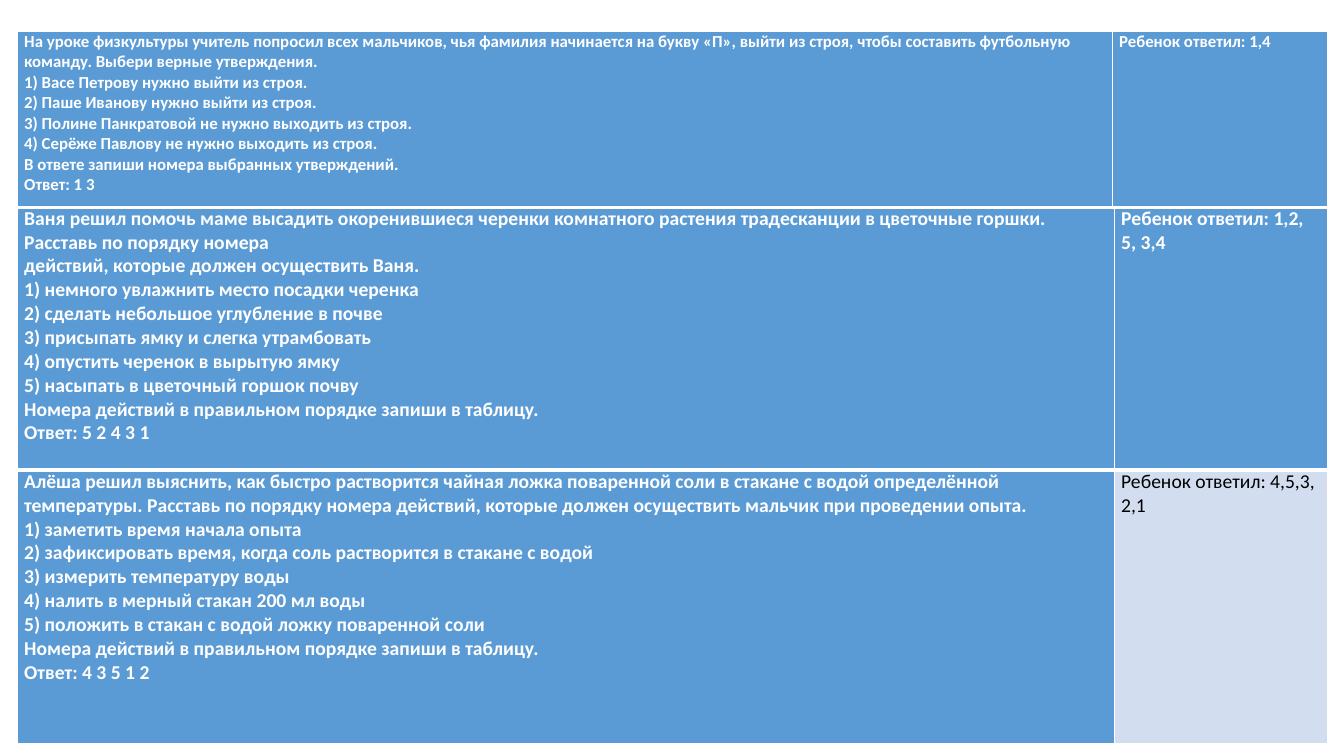
from dataclasses import dataclass

import pptx
import pptx.dml.color
import pptx.oxml
import pptx.oxml.ns
import pptx.util

EMU_PER_PX = 9144


@dataclass(frozen=True)
class Theme:
    font: str = "Calibri"
    blue: str = "5B9BD5"
    pale: str = "D2DEEF"
    white: str = "FFFFFF"
    black: str = "000000"
    small: int = 12
    large: int = 14
    thin_line: int = 1
    thick_line: int = 3


THEME = Theme()


@dataclass(frozen=True)
class CellStyle:
    fill: str
    color: str
    bold: bool


HEADER = CellStyle(THEME.blue, THEME.white, True)
BODY = CellStyle(THEME.pale, THEME.black, False)


@dataclass(frozen=True)
class Task:
    height: int
    lines: tuple[str, ...]
    child_answer: str
    answer_style: CellStyle
    top_line: int
    bottom_line: int


@dataclass(frozen=True)
class TaskTable:
    left: int
    top: int
    columns: tuple[int, int]
    size: int
    tasks: tuple[Task, ...]


PLANT_TASK = Task(
    261,
    (
        "Ваня решил помочь маме высадить окоренившиеся черенки комнатного растения "
        "традесканции в цветочные горшки. Расставь по порядку номера",
        "действий, которые должен осуществить Ваня.",
        "1) немного увлажнить место посадки черенка",
        "2) сделать небольшое углубление в почве",
        "3) присыпать ямку и слегка утрамбовать",
        "4) опустить черенок в вырытую ямку",
        "5) насыпать в цветочный горшок почву",
        "Номера действий в правильном порядке запиши в таблицу.",
        "Ответ: 5 2 4 3 1",
    ),
    "Ребенок ответил: 1,2, 5, 3,4",
    HEADER,
    THEME.thin_line,
    THEME.thick_line,
)

SALT_TASK = Task(
    272,
    (
        "Алёша решил выяснить, как быстро растворится чайная ложка поваренной соли "
        "в стакане с водой определённой",
        "температуры. Расставь по порядку номера действий, которые должен осуществить "
        "мальчик при проведении опыта.",
        "1) заметить время начала опыта",
        "2) зафиксировать время, когда соль растворится в стакане с водой",
        "3) измерить температуру воды",
        "4) налить в мерный стакан 200 мл воды",
        "5) положить в стакан с водой ложку поваренной соли",
        "Номера действий в правильном порядке запиши в таблицу.",
        "Ответ: 4 3 5 1 2",
    ),
    "Ребенок ответил: 4,5,3, 2,1",
    BODY,
    THEME.thick_line,
    THEME.thin_line,
)

FOOTBALL_TASK = Task(
    175,
    (
        "На уроке физкультуры учитель попросил всех мальчиков, чья фамилия начинается "
        "на букву «П», выйти из строя, чтобы составить футбольную команду. "
        "Выбери верные утверждения.",
        "1) Васе Петрову нужно выйти из строя.",
        "2) Паше Иванову нужно выйти из строя.",
        "3) Полине Панкратовой не нужно выходить из строя.",
        "4) Серёже Павлову не нужно выходить из строя.",
        "В ответе запиши номера выбранных утверждений.",
        "Ответ: 1 3",
    ),
    "Ребенок ответил: 1,4",
    HEADER,
    THEME.thin_line,
    THEME.thick_line,
)

TABLES = (
    TaskTable(17, 205, (1088, 212), THEME.large, (PLANT_TASK, SALT_TASK)),
    TaskTable(17, 31, (1086, 214), THEME.small, (FOOTBALL_TASK,)),
)


def px(length: int) -> pptx.util.Emu:
    return pptx.util.Emu(length * EMU_PER_PX)


def rgb(value: str) -> pptx.dml.color.RGBColor:
    return pptx.dml.color.RGBColor.from_string(value)


def set_borders(cell, top: int, bottom: int) -> None:
    properties = cell._tc.get_or_add_tcPr()
    widths = {"L": THEME.thin_line, "R": THEME.thin_line, "T": top, "B": bottom}
    for side, width in widths.items():
        properties.append(pptx.oxml.parse_xml(
            f'<a:ln{side} {pptx.oxml.ns.nsdecls("a")} w="{pptx.util.Pt(width)}">'
            f'<a:solidFill><a:srgbClr val="{THEME.white}"/></a:solidFill>'
            f'</a:ln{side}>'
        ))


def fill_cell(cell, lines: tuple[str, ...], style: CellStyle, size: int) -> None:
    cell.margin_left = cell.margin_right = px(7)
    cell.margin_top = cell.margin_bottom = px(0)
    cell.fill.solid()
    cell.fill.fore_color.rgb = rgb(style.fill)
    frame = cell.text_frame
    for index, line in enumerate(lines):
        paragraph = frame.add_paragraph() if index else frame.paragraphs[0]
        run = paragraph.add_run()
        run.text = line
        run.font.name = THEME.font
        run.font.size = pptx.util.Pt(size)
        run.font.bold = style.bold
        run.font.color.rgb = rgb(style.color)


def draw_table(slide, layout: TaskTable) -> None:
    height = sum(task.height for task in layout.tasks)
    table = slide.shapes.add_table(
        len(layout.tasks), len(layout.columns), px(layout.left), px(layout.top),
        px(sum(layout.columns)), px(height),
    ).table
    table.horz_banding = False
    for column, width in zip(table.columns, layout.columns):
        column.width = px(width)
    for row, task in zip(table.rows, layout.tasks):
        row.height = px(task.height)
        contents = ((task.lines, HEADER), ((task.child_answer,), task.answer_style))
        for cell, (lines, style) in zip(row.cells, contents):
            set_borders(cell, task.top_line, task.bottom_line)
            fill_cell(cell, lines, style, layout.size)


def main() -> None:
    presentation = pptx.Presentation()
    presentation.slide_width = px(1333)
    presentation.slide_height = px(750)
    slide = presentation.slides.add_slide(presentation.slide_layouts[6])
    for layout in TABLES:
        draw_table(slide, layout)
    presentation.save("out.pptx")


if __name__ == "__main__":
    main()
